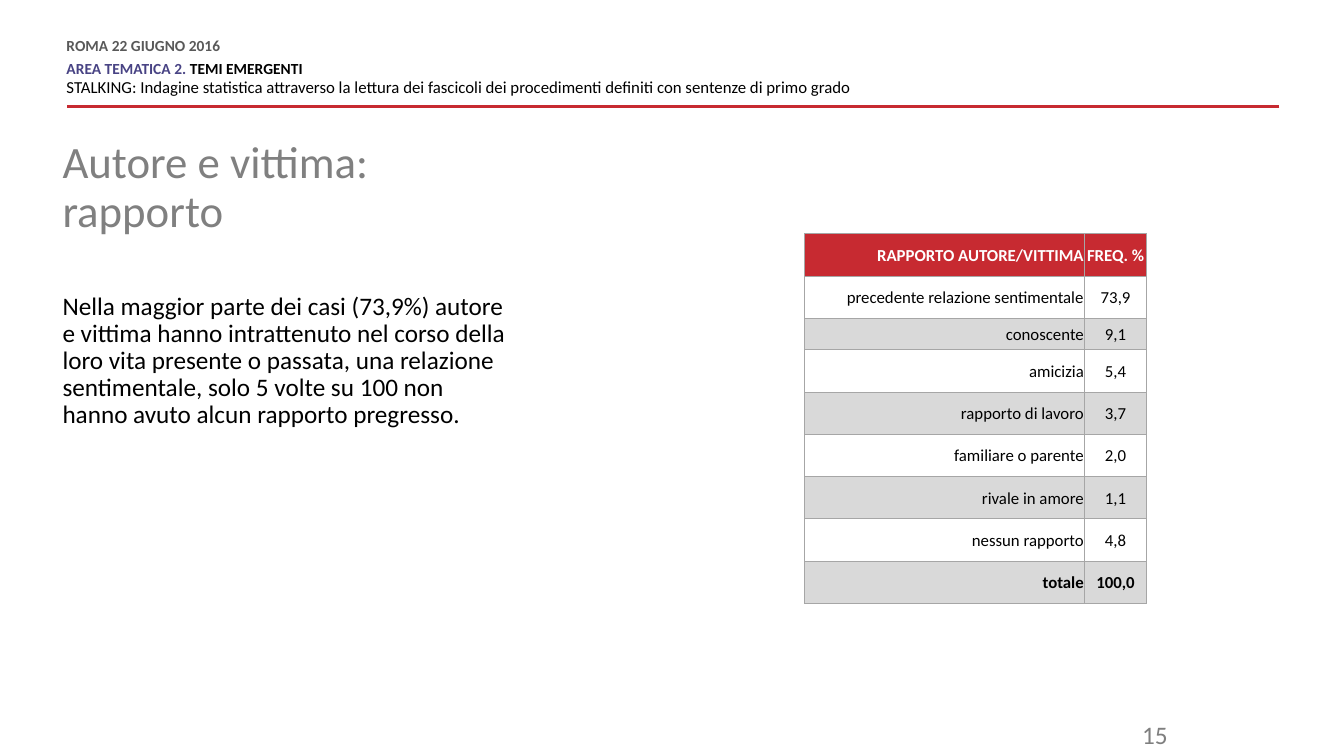
from lxml import etree
from pptx import Presentation
from pptx import util as u
from pptx.dml.color import RGBColor
from pptx.enum import shapes, text
from pptx.oxml import parse_xml
from pptx.oxml.ns import nsdecls, qn

PX = 9144  # 100 px to the inch
RED = RGBColor(0xC7, 0x2A, 0x31)
PURPLE = RGBColor(0x48, 0x43, 0x84)
BLACK = RGBColor(0, 0, 0)
WHITE = RGBColor(0xFF, 0xFF, 0xFF)
DARK = RGBColor(0x59, 0x59, 0x59)
GREY = RGBColor(0x80, 0x80, 0x80)
NUMBER_GREY = RGBColor(0x7F, 0x7F, 0x7F)
BAND = RGBColor(0xD9, 0xD9, 0xD9)
BORDER = "A6A6A6"


def px(*lengths):
    return [u.Emu(n * PX) for n in lengths]


def add_run(p, words, size, color, bold=False):
    r = p.add_run()
    r.text = words
    r.font.name = "Calibri"
    r.font.size = u.Pt(size)
    r.font.bold = bold
    r.font.color.rgb = color


prs = Presentation()
prs.slide_width, prs.slide_height = px(1333, 750)
s = prs.slides.add_slide(prs.slide_layouts[1])

# Header
rule = s.shapes.add_connector(shapes.MSO_CONNECTOR.STRAIGHT, *px(1269, 106, 66, 106))
rule.line.color.rgb = RED
rule.line.width = u.Pt(2)
etree.SubElement(rule._element.spPr, qn("a:effectLst"))

header = [
    (0, 6, [("ROMA 22 GIUGNO 2016", 11, DARK, True)]),
    (0, 0, [("AREA TEMATICA 2. ", 11, PURPLE, True), ("TEMI EMERGENTI", 11, BLACK, True)]),
    (3, 6, [("STALKING: Indagine statistica attraverso la lettura dei fascicoli "
             "dei procedimenti definiti con sentenze di primo grado", 12, BLACK, False)]),
]
tf = s.shapes.add_textbox(*px(66, 39, 834, 59)).text_frame
tf.word_wrap = True
tf.margin_left = tf.margin_top = tf.margin_right = tf.margin_bottom = 0
for i, (before, after, runs) in enumerate(header):
    p = tf.add_paragraph() if i else tf.paragraphs[0]
    p.line_spacing = u.Pt(10.8)
    p.space_before, p.space_after = u.Pt(before), u.Pt(after)
    for run in runs:
        add_run(p, *run)

# Title and body
title, body = s.shapes.title, s.placeholders[1]
blocks = [
    (title, (62, 139, 392, 113), "Autore e vittima: rapporto", 32, GREY),
    (body, (62, 291, 445, 334),
     "Nella maggior parte dei casi (73,9%) autore e vittima hanno intrattenuto "
     "nel corso della loro vita presente o passata, una relazione sentimentale, "
     "solo 5 volte su 100 non hanno avuto alcun rapporto pregresso.", 18, BLACK),
]
for sp, box, words, size, color in blocks:
    sp.left, sp.top, sp.width, sp.height = px(*box)
    tf = sp.text_frame
    tf.word_wrap = True
    tf.auto_size = text.MSO_AUTO_SIZE.NONE
    tf.vertical_anchor = text.MSO_ANCHOR.TOP
    tf.margin_left = tf.margin_top = tf.margin_right = tf.margin_bottom = 0
    p = tf.paragraphs[0]
    pPr = p._p.get_or_add_pPr()
    pPr.set("marL", "0")
    pPr.set("indent", "0")
    etree.SubElement(pPr, qn("a:buNone"))
    p.alignment = text.PP_ALIGN.LEFT
    p.line_spacing = 0.9
    p.space_before = u.Pt(0)
    add_run(p, words, size, color)

# Table
rows = [
    ("RAPPORTO AUTORE/VITTIMA", "FREQ. %"),
    ("precedente relazione sentimentale", "73,9"),
    ("conoscente", "9,1"),
    ("amicizia", "5,4"),
    ("rapporto di lavoro", "3,7"),
    ("familiare o parente", "2,0"),
    ("rivale in amore", "1,1"),
    ("nessun rapporto", "4,8"),
    ("totale", "100,0"),
]
table = s.shapes.add_table(len(rows), 2, *px(798, 232, 339, 367)).table
table.first_row = table.horz_banding = False
table.columns[0].width, table.columns[1].width = px(278, 61)
for i, row in enumerate(rows):
    table.rows[i].height, = px(31 if i == 2 else 42)
    fill = RED if i == 0 else WHITE if i % 2 else BAND
    for j, words in enumerate(row):
        cell = table.cell(i, j)
        cell.vertical_anchor = text.MSO_ANCHOR.MIDDLE
        cell.margin_left, cell.margin_top, cell.margin_right, cell.margin_bottom = px(1, 1, 1, 0)
        for side in "LRTB":
            cell._tc.get_or_add_tcPr().append(parse_xml(
                f'<a:ln{side} {nsdecls("a")} w="9525"><a:solidFill>'
                f'<a:srgbClr val="{BORDER}"/></a:solidFill></a:ln{side}>'))
        cell.fill.solid()
        cell.fill.fore_color.rgb = fill
        p = cell.text_frame.paragraphs[0]
        p.alignment = text.PP_ALIGN.CENTER if j else text.PP_ALIGN.RIGHT
        add_run(p, words, 12, BLACK if i else WHITE, i in (0, len(rows) - 1))

# Slide number
tf = s.shapes.add_textbox(*px(1050, 709, 118, 35)).text_frame
tf.word_wrap = True
p = tf.paragraphs[0]
p.alignment = text.PP_ALIGN.RIGHT
add_run(p, "15", 18, NUMBER_GREY)

prs.save("out.pptx")
